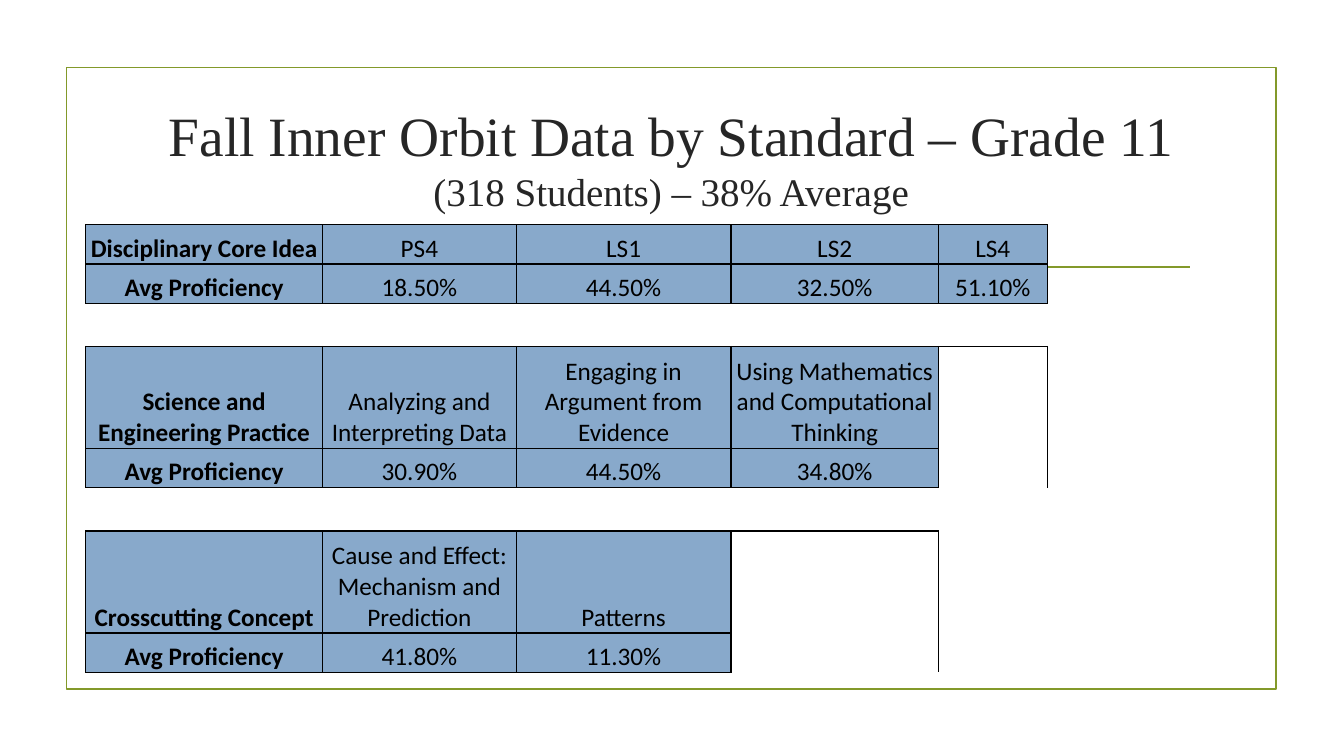
from lxml.etree import SubElement as Sub
from pptx import Presentation
from pptx.dml.color import RGBColor
from pptx.enum.shapes import MSO_CONNECTOR as Conn, MSO_SHAPE as Shape
from pptx.enum.text import MSO_ANCHOR as Anchor, MSO_AUTO_SIZE as Auto, PP_ALIGN as Align
from pptx.oxml.ns import qn
from pptx.util import Cm, Pt

GREEN = RGBColor(0x83, 0x99, 0x2A)
DARK = RGBColor(0x26, 0x26, 0x26)
BLACK = RGBColor(0, 0, 0)
BLUE = RGBColor(0x88, 0xA9, 0xCB)
PLAIN = "{2D5ABB26-0587-4C30-8999-92F81FD0307C}"

WIDTHS = [5.97, 4.88, 5.41, 5.23, 2.74, 5.36]
HEIGHTS = [0.99, 0.99, 1.09, 2.57, 0.99, 1.09, 2.57, 0.99]
ROWS = [
    ["Disciplinary Core Idea", "PS4", "LS1", "LS2", "LS4"],
    ["Avg Proficiency", "18.50%", "44.50%", "32.50%", "51.10%"],
    [],
    ["Science and Engineering Practice", "Analyzing and Interpreting Data",
     "Engaging in Argument from Evidence",
     "Using Mathematics and Computational Thinking"],
    ["Avg Proficiency", "30.90%", "44.50%", "34.80%"],
    [],
    ["Crosscutting Concept", "Cause and Effect: Mechanism and Prediction", "Patterns"],
    ["Avg Proficiency", "41.80%", "11.30%"],
]


def used(row, col):
    return 0 <= row < len(ROWS) and 0 <= col < len(ROWS[row])


def edge(cell, side):
    line = Sub(cell._tc.get_or_add_tcPr(), qn("a:ln" + side), w=str(Pt(1)))
    fill = Sub(line, qn("a:solidFill"))
    Sub(fill, qn("a:srgbClr"), val=str(BLACK))


deck = Presentation()
deck.slide_width, deck.slide_height = Cm(33.87), Cm(19.05)
slide = deck.slides.add_slide(deck.slide_layouts[5])
shapes = slide.shapes

title = shapes.title
title.left, title.top, title.width, title.height = Cm(3.58), Cm(2.16), Cm(26.67), Cm(3.63)
frame = title.text_frame
frame.word_wrap = True
frame.auto_size = Auto.NONE
frame.vertical_anchor = Anchor.MIDDLE
para = frame.paragraphs[0]
para.alignment = Align.CENTER
for text, size in [("Fall Inner Orbit Data by Standard – Grade 11", 39.6),
                   ("(318 Students) – 38% Average", 27.9)]:
    if para.runs:
        para.add_line_break()
    run = para.add_run()
    run.text = text
    run.font.size = Pt(size)
    run.font.name = "Times New Roman"
    run.font.color.rgb = DARK

border = shapes.add_shape(Shape.RECTANGLE, Cm(1.68), Cm(1.7), Cm(30.48), Cm(15.67))
border.shadow.inherit = False
border.fill.background()
rule = shapes.add_connector(Conn.STRAIGHT, Cm(3.89), Cm(6.73), Cm(30), Cm(6.73))
Sub(rule._element.spPr, qn("a:effectLst"))
for item in (border, rule):
    item.line.color.rgb = GREEN
    item.line.width = Pt(1.25)

grid = shapes.add_table(len(HEIGHTS), len(WIDTHS), Cm(2.16), Cm(5.66),
                        Cm(sum(WIDTHS)), Cm(sum(HEIGHTS)))
table = grid.table
table.first_row = table.horz_banding = False
table._tbl.tblPr.find(qn("a:tableStyleId")).text = PLAIN
for col, width in zip(table.columns, WIDTHS):
    col.width = Cm(width)
for r, height in enumerate(HEIGHTS):
    table.rows[r].height = Cm(height)
    for c in range(len(WIDTHS)):
        cell = table.cell(r, c)
        cell.margin_left = cell.margin_right = cell.margin_top = Cm(0.03)
        cell.margin_bottom = 0
        cell.vertical_anchor = Anchor.BOTTOM
        for side, down, over in [("L", 0, -1), ("R", 0, 1), ("T", -1, 0), ("B", 1, 0)]:
            if used(r, c) or used(r + down, c + over):
                edge(cell, side)
        if not used(r, c):
            cell.fill.background()
            continue
        cell.fill.solid()
        cell.fill.fore_color.rgb = BLUE
        para = cell.text_frame.paragraphs[0]
        para.alignment = Align.CENTER
        run = para.add_run()
        run.text = ROWS[r][c]
        run.font.size = Pt(18)
        run.font.name = "Calibri"
        run.font.bold = c == 0
        run.font.color.rgb = BLACK

deck.save("out.pptx")
